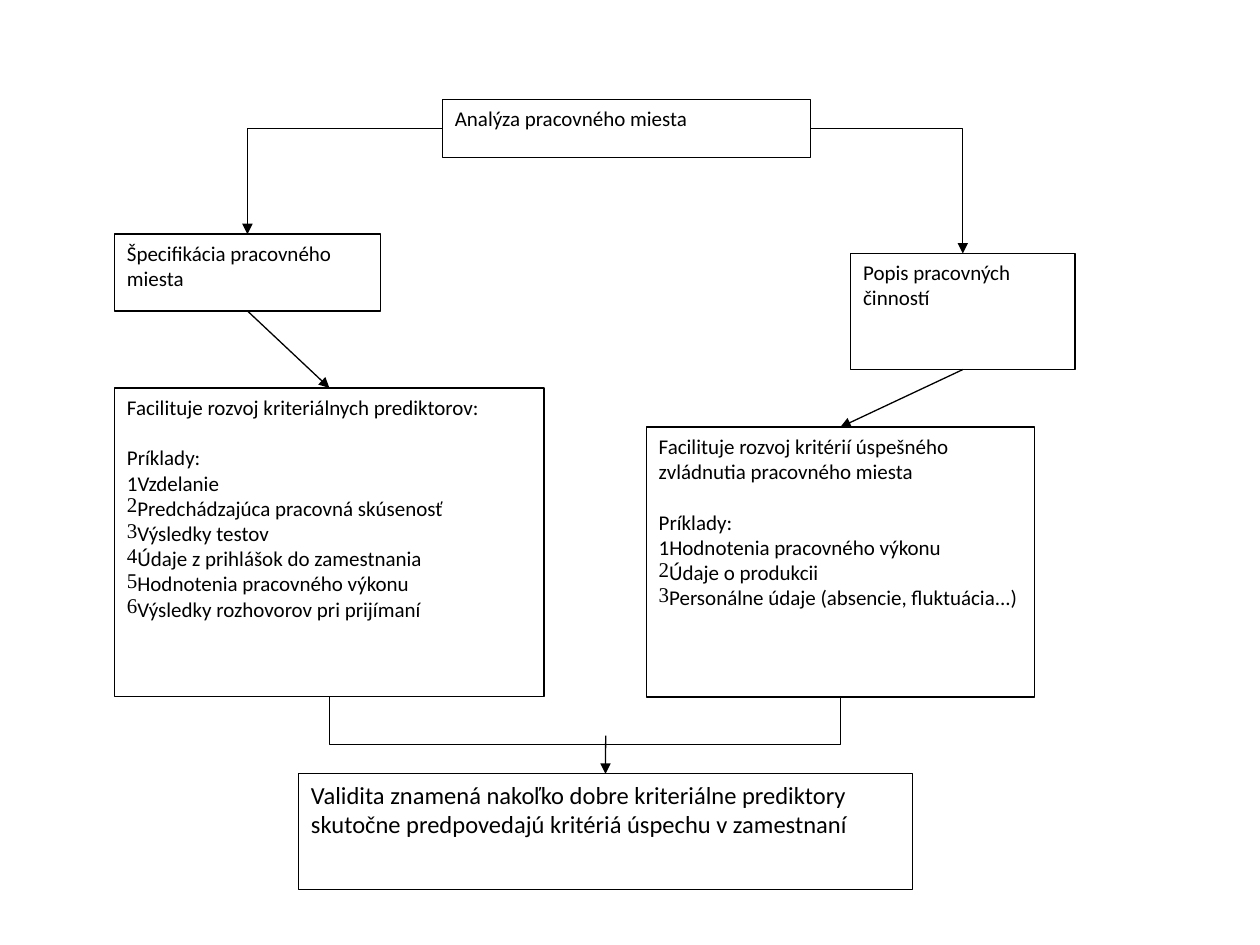
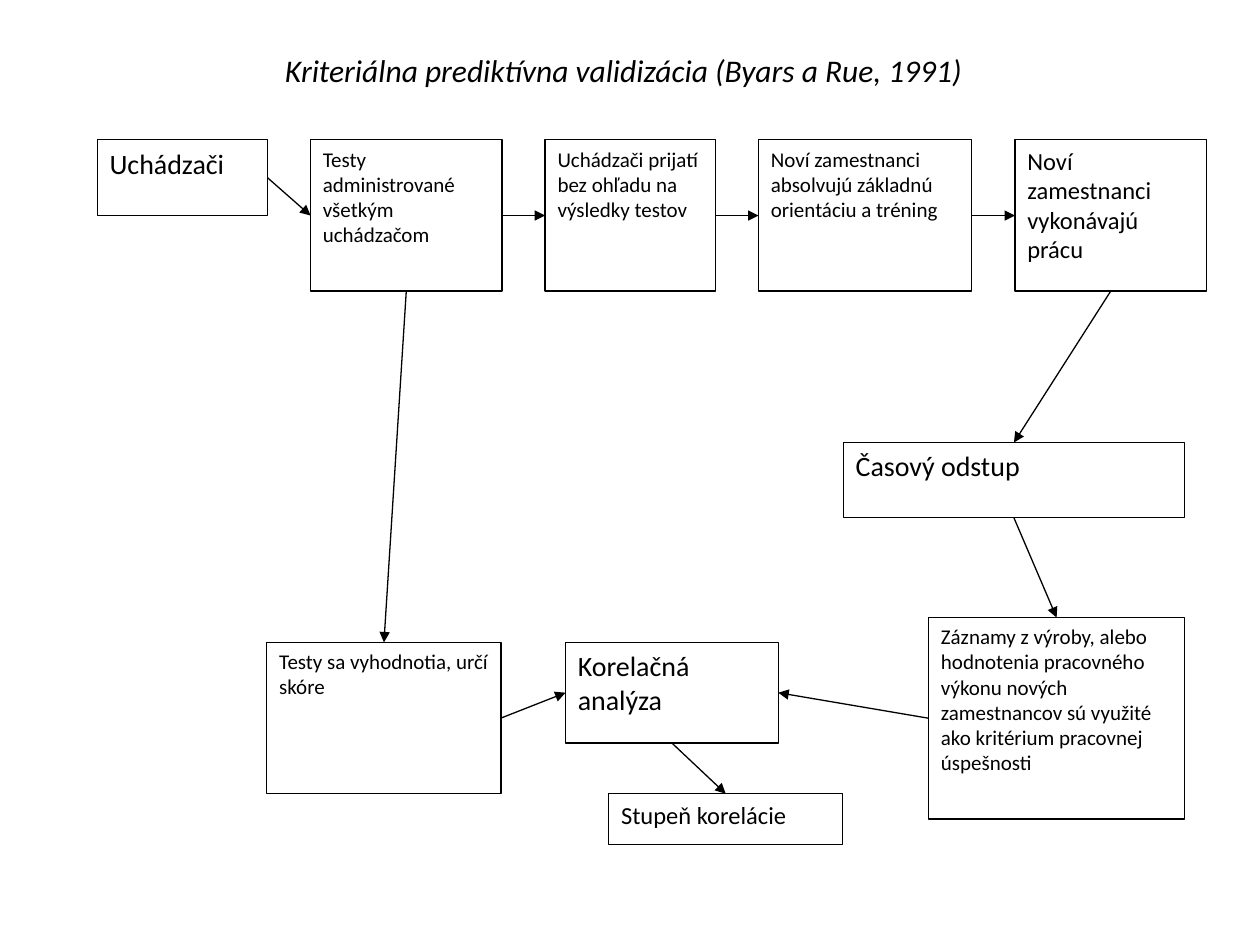
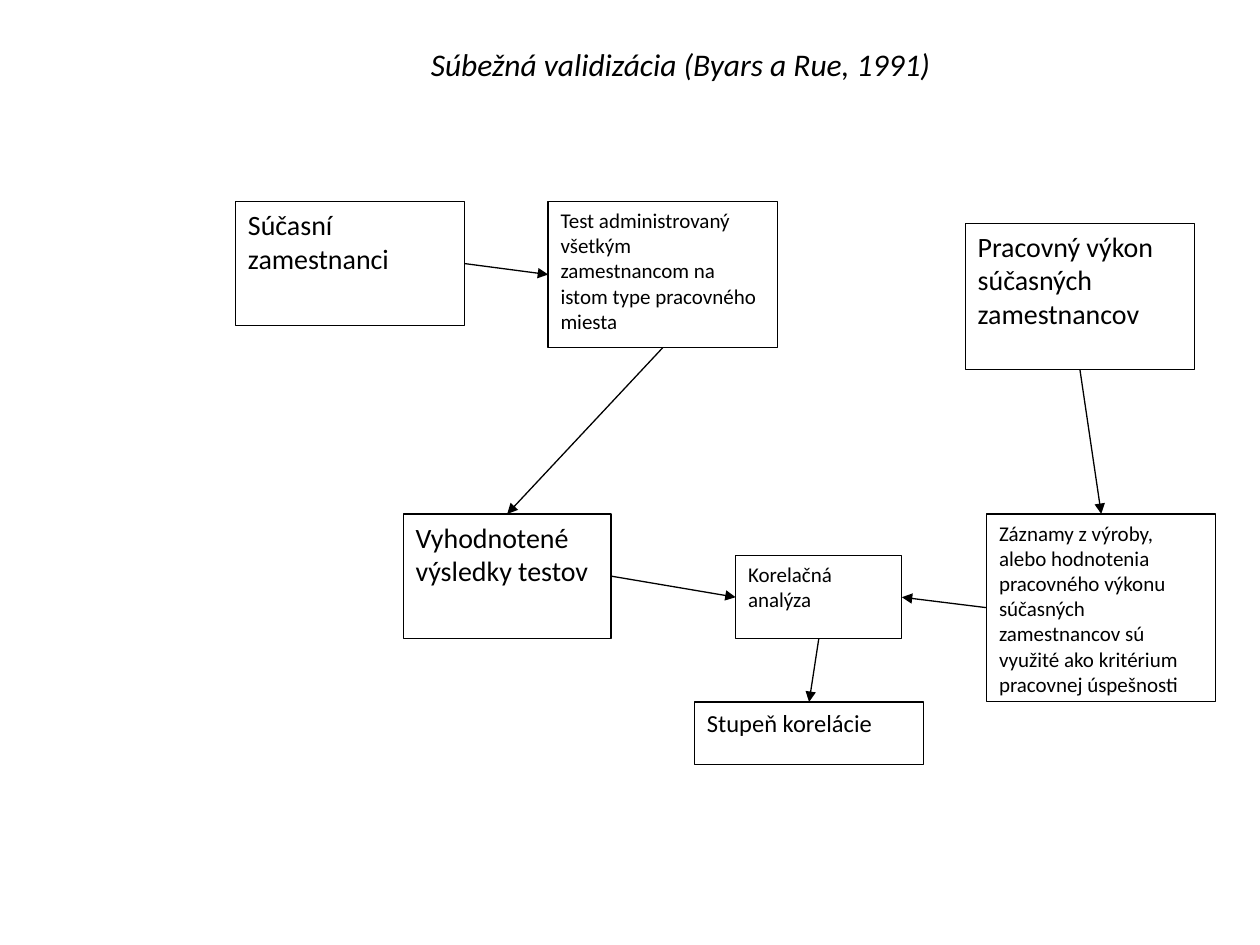
"""Build three flow diagrams on job analysis and test validation."""
from lxml import etree
from pptx import Presentation
from pptx.dml.color import RGBColor
from pptx.enum.shapes import MSO_CONNECTOR, MSO_SHAPE
from pptx.enum.text import MSO_ANCHOR, MSO_AUTO_SIZE, PP_ALIGN
from pptx.oxml.ns import qn
from pptx.util import Cm, Pt

BLACK = RGBColor(0, 0, 0)
WHITE = RGBColor(255, 255, 255)
FONT = "Calibri"
LINE_WIDTH = Pt(0.75)
LINE_GAP = Pt(14.65)
RECTANGLE = MSO_SHAPE.RECTANGLE
STRAIGHT, ELBOW = MSO_CONNECTOR.STRAIGHT, MSO_CONNECTOR.ELBOW
LEFT_ALIGN, TOP_ANCHOR = PP_ALIGN.LEFT, MSO_ANCHOR.TOP
NO_AUTOFIT = MSO_AUTO_SIZE.NONE
TOP, LEFT, BOTTOM, RIGHT = range(4)
TITLE_ONLY, BLANK = 5, 6


def style_paragraph(para, size, italic=False):
    """Give a paragraph the shared font and left alignment."""
    para.alignment = LEFT_ALIGN
    para.font.name = FONT
    para.font.size = Pt(size)
    para.font.italic = italic
    para.font.color.rgb = BLACK


def style_line(shape):
    """Draw a thin black line without a shadow."""
    shape.line.color.rgb = BLACK
    shape.line.width = LINE_WIDTH


def add_title(page, text, left, top, width):
    """Place and format the title placeholder."""
    title = page.shapes.title
    title.left, title.top, title.width, title.height = Cm(left), Cm(top), Cm(width), Cm(1.02)
    frame = title.text_frame
    frame.text = text
    frame.word_wrap = True
    frame.auto_size = NO_AUTOFIT
    frame.vertical_anchor = TOP_ANCHOR
    style_paragraph(frame.paragraphs[0], 18, italic=True)


def add_box(page, text, size, left, top, width, height):
    """Add a white outlined box holding one paragraph."""
    box = page.shapes.add_shape(RECTANGLE, Cm(left), Cm(top), Cm(width), Cm(height))
    box.shadow.inherit = False
    box.fill.solid()
    box.fill.fore_color.rgb = WHITE
    style_line(box)
    frame = box.text_frame
    frame.word_wrap = True
    frame.vertical_anchor = TOP_ANCHOR
    frame.text = text
    style_paragraph(frame.paragraphs[0], size)
    return box


def add_examples(box, first, *others):
    """Append a numbered list of examples to a box."""
    lines = [("Príklady:", None), ("1" + first, None)]
    lines += [(text, str(number)) for number, text in enumerate(others, 2)]
    for index, (text, bullet) in enumerate(lines):
        para = box.text_frame.add_paragraph()
        para.text = text
        if bullet:
            properties = para._p.get_or_add_pPr()
            etree.SubElement(properties, qn("a:buChar")).set("char", bullet)
        if index == 0:
            para.space_before = LINE_GAP
        style_paragraph(para, 12)


def add_arrow(page, end_box, end_side, start=(0, 0), kind=STRAIGHT):
    """Add an arrow from a point to one side of a box."""
    x, y = map(Cm, start)
    arrow = page.shapes.add_connector(kind, x, y, x, y)
    arrow.end_connect(end_box, end_side)
    style_line(arrow)
    properties = arrow._element.spPr
    etree.SubElement(properties.find(qn("a:ln")), qn("a:tailEnd")).set("type", "triangle")
    etree.SubElement(properties, qn("a:effectLst"))
    if kind == ELBOW:
        properties.find(qn("a:prstGeom")).set("prst", "bentConnector2")
    return arrow


def link(page, start_box, start_side, end_box, end_side, kind=STRAIGHT):
    """Join two boxes with an arrow glued to their sides."""
    arrow = add_arrow(page, end_box, end_side, kind=kind)
    arrow.begin_connect(start_box, start_side)


def add_bracket(page, first, second, depth):
    """Join the bottoms of two boxes with an open bracket."""
    left, right = (box.left + box.width // 2 for box in (first, second))
    top = first.top + first.height
    bottom = top + Cm(depth)
    builder = page.shapes.build_freeform(left, top)
    builder.add_line_segments([(left, bottom), (right, bottom), (right, top)], close=False)
    bracket = builder.convert_to_shape()
    bracket.shadow.inherit = False
    bracket.fill.background()
    style_line(bracket)


def build_job_analysis(page):
    """Show how job analysis leads to validity."""
    analysis = add_box(page, "Analýza pracovného miesta", 12, 8.92, 2, 7.42, 1.17)
    duties = add_box(page, "Popis pracovných činností", 12, 17.15, 5.11, 4.52, 2.34)
    requirements = add_box(page, "Špecifikácia pracovného miesta", 12, 2.31, 4.72, 5.36, 1.55)
    predictors = add_box(page, "Facilituje rozvoj kriteriálnych prediktorov:", 12,
                         2.31, 7.82, 8.66, 6.22)
    add_examples(predictors, "Vzdelanie", "Predchádzajúca pracovná skúsenosť",
                 "Výsledky testov", "Údaje z prihlášok do zamestnania",
                 "Hodnotenia pracovného výkonu", "Výsledky rozhovorov pri prijímaní")
    criteria = add_box(page, "Facilituje rozvoj kritérií úspešného zvládnutia pracovného miesta",
                       12, 13.03, 8.61, 7.82, 5.44)
    add_examples(criteria, "Hodnotenia pracovného výkonu", "Údaje o produkcii",
                 "Personálne údaje (absencie, fluktuácia...)")
    validity = add_box(page, "Validita znamená nakoľko dobre kriteriálne prediktory skutočne "
                       "predpovedajú kritériá úspechu v zamestnaní", 14, 6.02, 15.6, 12.37, 2.34)
    link(page, analysis, LEFT, requirements, TOP, ELBOW)
    link(page, analysis, RIGHT, duties, TOP, ELBOW)
    link(page, requirements, BOTTOM, predictors, TOP)
    link(page, duties, BOTTOM, criteria, TOP)
    add_bracket(page, predictors, criteria, 0.97)
    add_arrow(page, validity, TOP, start=(12.21, 14.83))


def build_predictive(page):
    """Show predictive validation of applicants."""
    add_title(page, "Kriteriálna prediktívna validizácia (Byars a Rue, 1991)", 5.49, 0.91, 15.62)
    steps = [
        ("Uchádzači", 16, 3.43, 1.52),
        ("Testy administrované všetkým uchádzačom", 12, 3.86, 3.05),
        ("Uchádzači prijatí bez ohľadu na výsledky testov", 12, 3.43, 3.05),
        ("Noví zamestnanci absolvujú základnú orientáciu a tréning", 12, 4.3, 3.05),
        ("Noví zamestnanci vykonávajú prácu", 14, 3.86, 3.05),
    ]
    row, left = [], 1.96
    for text, size, width, height in steps:
        row.append(add_box(page, text, size, left, 2.82, width, height))
        left += width + 0.87
    delay = add_box(page, "Časový odstup", 16, 17, 8.92, 6.88, 1.52)
    scores = add_box(page, "Testy sa vyhodnotia, určí skóre", 12, 5.38, 12.95, 4.72, 3.05)
    correlation = add_box(page, "Korelačná analýza", 16, 11.4, 12.95, 4.29, 2.03)
    degree = add_box(page, "Stupeň korelácie", 14, 12.27, 16, 4.72, 1.02)
    records = add_box(page, "Záznamy z výroby, alebo hodnotenia pracovného výkonu nových "
                      "zamestnancov sú využité ako kritérium pracovnej úspešnosti",
                      12, 18.72, 12.45, 5.16, 4.06)
    for current, following in zip(row, row[1:]):
        link(page, current, RIGHT, following, LEFT)
    link(page, row[1], BOTTOM, scores, TOP)
    link(page, scores, RIGHT, correlation, LEFT)
    link(page, correlation, BOTTOM, degree, TOP)
    link(page, records, LEFT, correlation, RIGHT)
    link(page, delay, BOTTOM, records, TOP)
    link(page, row[-1], BOTTOM, delay, TOP)


def build_concurrent(page):
    """Show concurrent validation of current employees."""
    add_title(page, "Súbežná validizácia (Byars a Rue, 1991)", 8.43, 0.79, 11.99)
    employees = add_box(page, "Súčasní zamestnanci", 16, 4.75, 4.06, 4.62, 2.51)
    test = add_box(page, "Test administrovaný všetkým zamestnancom na istom type "
                   "pracovného miesta", 12, 11.05, 4.06, 4.62, 2.95)
    performance = add_box(page, "Pracovný výkon súčasných zamestnancov", 16,
                          19.46, 4.5, 4.62, 2.95)
    results = add_box(page, "Vyhodnotené výsledky testov", 16, 8.13, 10.36, 4.19, 2.51)
    correlation = add_box(page, "Korelačná analýza", 12, 14.83, 11.2, 3.35, 1.68)
    records = add_box(page, "Záznamy z výroby, alebo hodnotenia pracovného výkonu súčasných "
                      "zamestnancov sú využité ako kritérium pracovnej úspešnosti",
                      12, 19.89, 10.36, 4.62, 3.78)
    degree = add_box(page, "Stupeň korelácie", 14, 14, 14.15, 4.62, 1.27)
    link(page, employees, RIGHT, test, LEFT)
    link(page, test, BOTTOM, results, TOP)
    link(page, results, RIGHT, correlation, LEFT)
    link(page, performance, BOTTOM, records, TOP)
    link(page, records, LEFT, correlation, RIGHT)
    link(page, correlation, BOTTOM, degree, TOP)


def main():
    """Build and save the deck."""
    deck = Presentation()
    deck.slide_width, deck.slide_height = Cm(25.4), Cm(19.05)
    pages = [(BLANK, build_job_analysis), (TITLE_ONLY, build_predictive),
             (TITLE_ONLY, build_concurrent)]
    for layout, build in pages:
        build(deck.slides.add_slide(deck.slide_layouts[layout]))
    deck.save("out.pptx")


if __name__ == "__main__":
    main()
